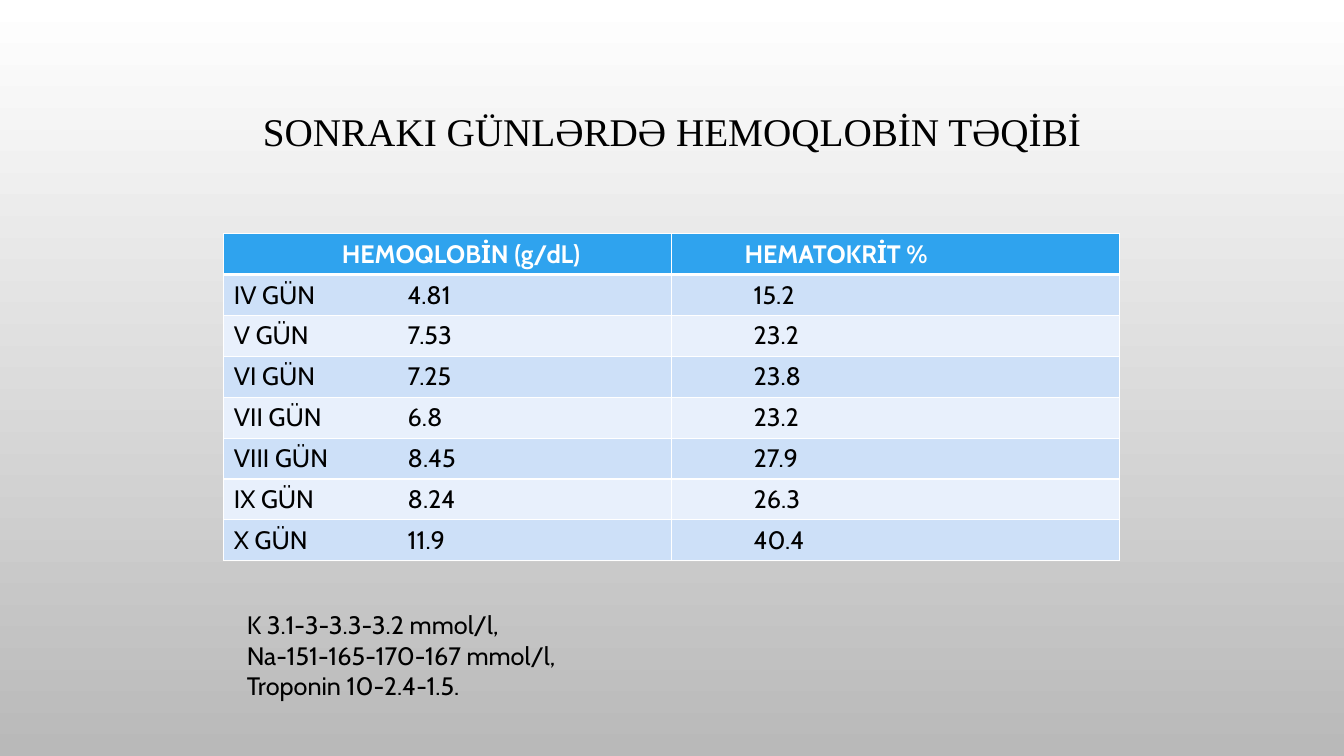
"""Build the slide that follows haemoglobin and haematocrit by day."""
from lxml import etree
from pptx import Presentation
from pptx.dml.color import RGBColor
from pptx.enum.text import MSO_ANCHOR, PP_ALIGN
from pptx.oxml.ns import qn
from pptx.util import Cm, Pt

MID, CENTER = MSO_ANCHOR.MIDDLE, PP_ALIGN.CENTER

TITLE = "SONRAKI GÜNLƏRDƏ HEMOQLOBİN TƏQİBİ"
HEADS = ("HEMOQLOBİN (g/dL)", "HEMATOKRİT %")
DAYS = [
    ("IV GÜN", "4.81", "15.2"),
    ("V GÜN", "7.53", "23.2"),
    ("VI GÜN", "7.25", "23.8"),
    ("VII GÜN", "6.8", "23.2"),
    ("VIII GÜN", "8.45", "27.9"),
    ("IX GÜN", "8.24", "26.3"),
    ("X GÜN", "11.9", "40.4"),
]
NOTES = [
    "K 3.1-3-3.3-3.2 mmol/l,",
    "Na-151-165-170-167 mmol/l,",
    "Troponin 10-2.4-1.5.",
]
COLORS = {
    "white": "FFFFFF", "gray": "B9B9B9", "black": "000000",
    "head": "2FA3EE", "odd": "CDE0F8", "even": "E8F0FC",
}
SANS, SERIF = "Cabin", "Times New Roman"
HEAD_IN = (Cm(2.72), Cm(1.58))
BODY_IN = (0, Cm(1.81))
TAB = Cm(4.38)
ROW = Cm(1.03)


def tint(name):
    return RGBColor.from_string(COLORS[name])


def write(para, text, font=SANS, size=18, color="black", bold=False):
    run = para.add_run()
    run.text = text
    run.font.name, run.font.size = font, Pt(size)
    run.font.color.rgb, run.font.bold = tint(color), bold


def edge(cell, row):
    props = cell._tc.get_or_add_tcPr()
    for side in "LRTB":
        thick = (side, row) in (("B", 0), ("T", 1))
        line = etree.SubElement(props, qn(f"a:ln{side}"), w=str(Pt(3 if thick else 1)))
        fill = etree.SubElement(line, qn("a:solidFill"))
        etree.SubElement(fill, qn("a:srgbClr"), val=COLORS["white"])


def indent(para, left):
    props = para._p.get_or_add_pPr()
    props.set("marL", str(left))
    tabs = etree.SubElement(props, qn("a:tabLst"))
    etree.SubElement(tabs, qn("a:tab"), pos=str(TAB), algn="l")


def add_title(slide):
    box = slide.shapes.title
    box.left, box.top, box.width, box.height = Cm(2.54), Cm(1.73), Cm(28.78), Cm(4.44)
    frame = box.text_frame
    frame.vertical_anchor, frame.margin_bottom = MID, Cm(1.27)
    para = frame.paragraphs[0]
    para.alignment, para.line_spacing = CENTER, 0.9
    write(para, TITLE, SERIF, 28)


def add_days(slide):
    rows = [HEADS] + [(f"{day}\t{hemo}", crit) for day, hemo, crit in DAYS]
    grid = slide.shapes.add_table(
        len(rows), 2, Cm(5.64), Cm(5.89), Cm(22.58), ROW * len(rows)).table
    for r, row in enumerate(rows):
        grid.rows[r].height = ROW
        head = r == 0
        shade = "head" if head else "odd" if r % 2 else "even"
        for c, text in enumerate(row):
            cell = grid.cell(r, c)
            edge(cell, r)
            cell.fill.solid()
            cell.fill.fore_color.rgb = tint(shade)
            para = cell.text_frame.paragraphs[0]
            indent(para, (HEAD_IN if head else BODY_IN)[c])
            write(para, text, color="white" if head else "black", bold=head)


def add_notes(slide):
    frame = slide.shapes.add_textbox(Cm(5.97), Cm(15.24), Cm(22.53), Cm(2.57)).text_frame
    frame.word_wrap = True
    for i, text in enumerate(NOTES):
        write(frame.add_paragraph() if i else frame.paragraphs[0], text)


def main():
    deck = Presentation()
    deck.slide_width, deck.slide_height = Cm(33.87), Cm(19.05)
    slide = deck.slides.add_slide(deck.slide_layouts[5])
    back = slide.background.fill
    back.gradient()
    back.gradient_angle = 270
    for stop, name in zip(back.gradient_stops, ("white", "gray")):
        stop.color.rgb = tint(name)
        stop.position = 0 if name == "white" else 1
    add_title(slide)
    add_days(slide)
    add_notes(slide)
    deck.save("out.pptx")


if __name__ == "__main__":
    main()
